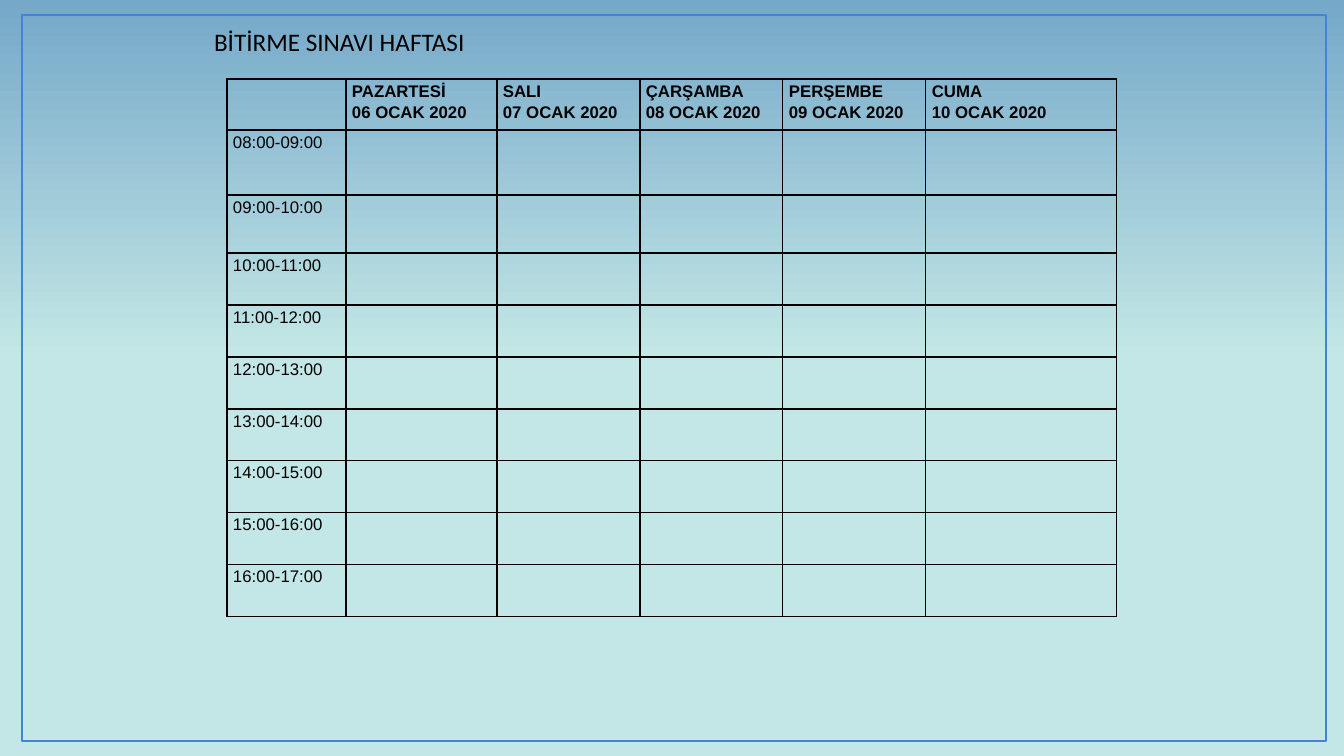
from lxml import etree
from pptx import Presentation
from pptx.dml.color import RGBColor
from pptx.enum.shapes import MSO_SHAPE
from pptx.enum.text import MSO_ANCHOR, MSO_AUTO_SIZE, PP_ALIGN
from pptx.oxml.ns import qn
from pptx.util import Pt

PX = 914400 / 100.8
RECTANGLE = MSO_SHAPE.RECTANGLE
TOP = MSO_ANCHOR.TOP
NO_AUTOFIT = MSO_AUTO_SIZE.NONE
LEFT = PP_ALIGN.LEFT

COLOURS = {"sky": "75A8C9", "water": "C3E7E6", "frame": "4584D3", "ink": "000000"}
TITLE = "BİTİRME SINAVI HAFTASI"
DAYS = ["PAZARTESİ", "SALI", "ÇARŞAMBA", "PERŞEMBE", "CUMA"]
FIRST_DATE = 6
FIRST_HOUR, LAST_HOUR = 8, 17
COLUMN_WIDTHS = [119, 151, 143, 143, 143, 191]
ROW_HEIGHTS = [51, 65, 58] + [52] * 7


def px(length):
    return round(length * PX)


def colour(name):
    return RGBColor.from_string(COLOURS[name])


def paint_background(page):
    fill = page.background.fill
    fill.gradient()
    fill.gradient_angle = 90
    for stop, (position, name) in zip(fill.gradient_stops, [(0.53, "water"), (1, "sky")]):
        stop.position = position
        stop.color.rgb = colour(name)


def add_frame(page, left, top, width, height):
    frame = page.shapes.add_shape(RECTANGLE, px(left), px(top), px(width), px(height))
    frame.shadow.inherit = False
    frame.fill.background()
    frame.line.color.rgb = colour("frame")
    frame.line.width = Pt(1.5)


def format_paragraph(para, font_name, size, bold=False):
    para.alignment = LEFT
    para.font.name = font_name
    para.font.size = Pt(size)
    para.font.bold = bold
    para.font.color.rgb = colour("ink")


def place_title(page, left, top, width, height):
    title = page.shapes.title
    title.left, title.top, title.width, title.height = map(px, (left, top, width, height))
    title_frame = title.text_frame
    title_frame.text = TITLE
    title_frame.word_wrap = False
    title_frame.auto_size = NO_AUTOFIT
    title_frame.vertical_anchor = TOP
    format_paragraph(title_frame.paragraphs[0], "Calibri", 18)


def add_borders(cell):
    """Rule all four sides; the lines must precede the cell's fill in the XML."""
    properties = cell._tc.get_or_add_tcPr()
    for index, side in enumerate(["a:lnL", "a:lnR", "a:lnT", "a:lnB"]):
        line = etree.Element(qn(side), w=str(Pt(1)))
        solid = etree.SubElement(line, qn("a:solidFill"))
        etree.SubElement(solid, qn("a:srgbClr"), val=COLOURS["ink"])
        properties.insert(index, line)


def write_cell(cell, text, bold):
    cell.margin_left = cell.margin_right = px(6)
    cell.margin_top = cell.margin_bottom = 0
    cell.text = text
    for para in cell.text_frame.paragraphs:
        format_paragraph(para, "Arial", 12, bold)
        para.line_spacing = 1.15


def add_timetable(page, left, top):
    header = [""] + [f"{day}\n{date:02} OCAK 2020" for date, day in enumerate(DAYS, FIRST_DATE)]
    hours = [f"{hour:02}:00-{hour + 1:02}:00" for hour in range(FIRST_HOUR, LAST_HOUR)]
    rows = [header] + [[slot] + [""] * len(DAYS) for slot in hours]
    table = page.shapes.add_table(
        len(rows), len(header), px(left), px(top), px(sum(COLUMN_WIDTHS)), px(sum(ROW_HEIGHTS))
    ).table
    table.first_row = table.horz_banding = False
    for column, width in zip(table.columns, COLUMN_WIDTHS):
        column.width = px(width)
    for row, height in zip(table.rows, ROW_HEIGHTS):
        row.height = px(height)
    for row_index, texts in enumerate(rows):
        for column_index, text in enumerate(texts):
            cell = table.cell(row_index, column_index)
            cell.fill.background()
            add_borders(cell)
            if text:
                write_cell(cell, text, bold=row_index == 0)


def main():
    deck = Presentation()
    deck.slide_width, deck.slide_height = px(1344), px(756)
    page = deck.slides.add_slide(deck.slide_layouts.get_by_name("Title Only"))
    paint_background(page)
    add_frame(page, 22, 15, 1304, 726)
    place_title(page, 204, 21, 278, 40)
    add_timetable(page, 227, 79)
    deck.save("out.pptx")


if __name__ == "__main__":
    main()
